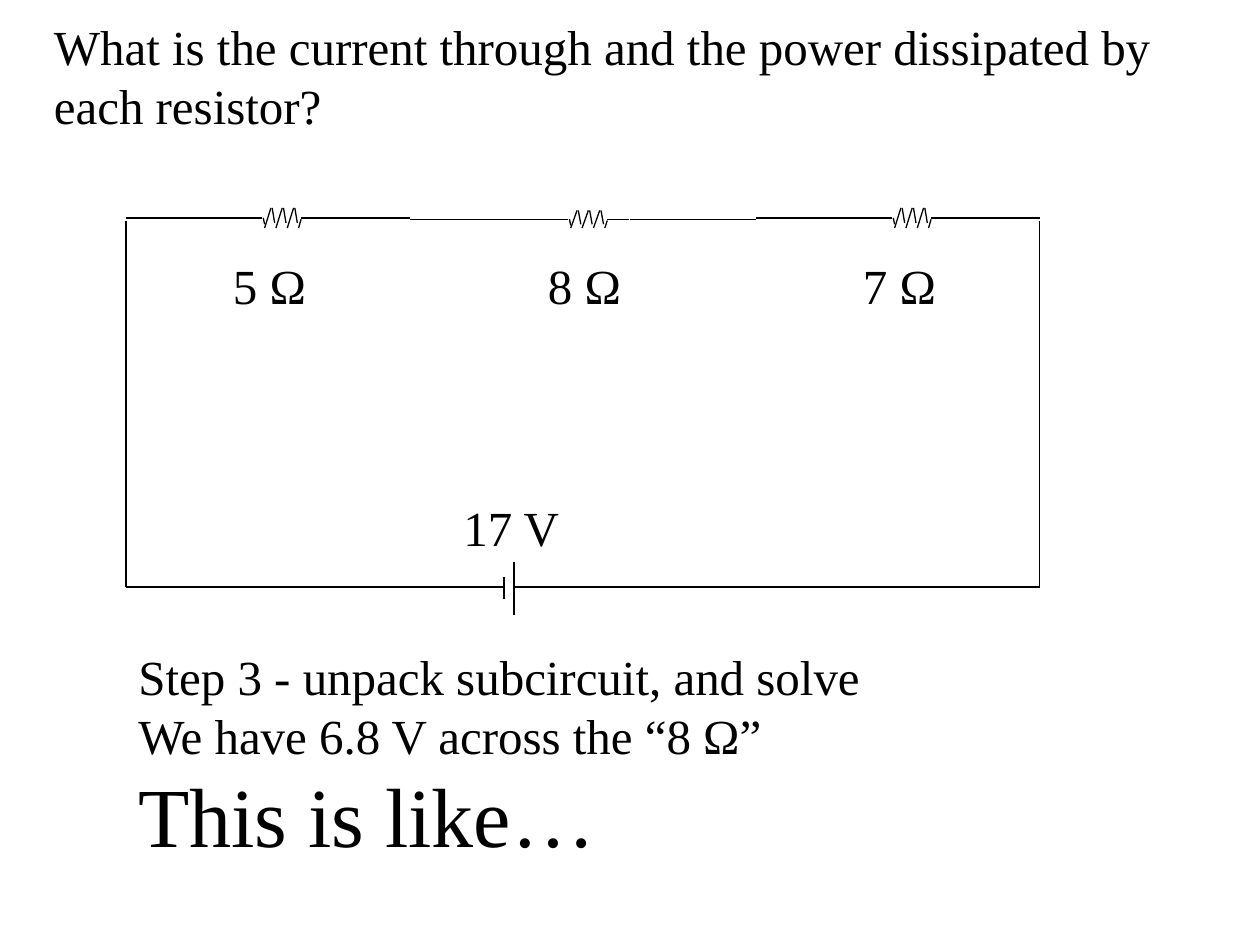
import pptx
import pptx.dml.color
import pptx.enum.shapes
import pptx.enum.text
import pptx.util
from lxml import etree
from pptx.oxml.ns import qn
from pptx.util import Inches


def colour(value):
    return pptx.dml.color.RGBColor.from_string(value)


class CircuitSlide:
    FONT = "Times New Roman"
    INK = "000000"
    LINE_WIDTH = 0.75

    def __init__(self, slide):
        self.slide = slide

    def text(self, left, top, width, height, lines, wrap=False):
        """Each line is a (wording, point size) pair."""
        shape = self.slide.shapes.add_textbox(
            Inches(left), Inches(top), Inches(width), Inches(height))
        frame = shape.text_frame
        frame.word_wrap = wrap
        frame.auto_size = pptx.enum.text.MSO_AUTO_SIZE.SHAPE_TO_FIT_TEXT
        for index, (wording, size) in enumerate(lines):
            paragraph = frame.add_paragraph() if index else frame.paragraphs[0]
            run = paragraph.add_run()
            run.text = wording
            run.font.name = self.FONT
            run.font.size = pptx.util.Pt(size)
            run.font.color.rgb = colour(self.INK)

    def line(self, x1, y1, x2, y2, shapes=None):
        if shapes is None:
            shapes = self.slide.shapes
        connector = shapes.add_connector(
            pptx.enum.shapes.MSO_CONNECTOR.STRAIGHT,
            Inches(x1), Inches(y1), Inches(x2), Inches(y2))
        connector.line.color.rgb = colour(self.INK)
        connector.line.width = pptx.util.Pt(self.LINE_WIDTH)
        etree.SubElement(connector._element.spPr, qn("a:effectLst"))

    def resistor(self, left, wire, reach):
        """Grouped zigzag with a lead on each side, reaching above and below the wire."""
        strokes = []
        for tooth in range(3):
            shift = 0.09 * tooth
            strokes.append((0.44 - shift, 0.04, 0.42 - shift, -reach))
            strokes.append((0.41 - shift, -reach, 0.36 - shift, reach))
        strokes += [
            (0.18, 0.05, 0.17, 0),
            (0.47, 0.01, 0.45, reach),
            (0.16, 0, 0, 0),
            (0.64, 0, 0.47, 0),
        ]
        group = self.slide.shapes.add_group_shape()
        for x1, y1, x2, y2 in strokes:
            self.line(left + x1, wire + y1, left + x2, wire + y2, group.shapes)


def main():
    presentation = pptx.Presentation()
    presentation.slide_width = Inches(10)
    presentation.slide_height = Inches(7.5)
    circuit = CircuitSlide(presentation.slides.add_slide(presentation.slide_layouts[6]))

    # Question
    circuit.text(0.33, 0.08, 9.33, 1.03, [(
        "What is the current through and the power dissipated by each resistor?", 28)],
        wrap=True)

    # Resistors in series, with their labels
    resistors = [
        ("5 Ω", 1.92, 1.73, 0.08),
        ("8 Ω", 4.35, 1.74, 0.07),
        ("7 Ω", 6.92, 1.73, 0.08),
    ]
    for index, (label, left, wire, reach) in enumerate(resistors):
        circuit.resistor(left, wire, reach)
        circuit.text(1.75 + 2.5 * index, 1.98, 0.79, 0.57, [(label, 28)])

    # Wires between the resistors
    for start, end, wire in [(1, 2, 1.73), (2.5, 3.25, 1.73), (3.25, 4.41, 1.74),
                             (5, 6, 1.74), (6, 7, 1.73), (7.5, 8.25, 1.73)]:
        circuit.line(start, wire, end, wire)

    # Sides and bottom of the loop
    bottom = 4.66
    for side in (1, 8.25):
        circuit.line(side, 1.75, side, bottom)
    circuit.line(1, bottom, 4, bottom)
    circuit.line(4.08, bottom, 8.25, bottom)

    # Battery
    circuit.line(4, 4.58, 4, 4.75)
    circuit.line(4.08, 4.46, 4.08, 4.88)
    circuit.text(3.58, 3.9, 0.97, 0.57, [("17 V", 28)])

    # Solution step
    circuit.text(1, 5.08, 5.93, 1.84, [
        ("Step 3 - unpack subcircuit, and solve", 28),
        ("We have 6.8 V across the “8 Ω”", 28),
        ("This is like…", 48),
    ])

    presentation.save("out.pptx")


if __name__ == "__main__":
    main()
